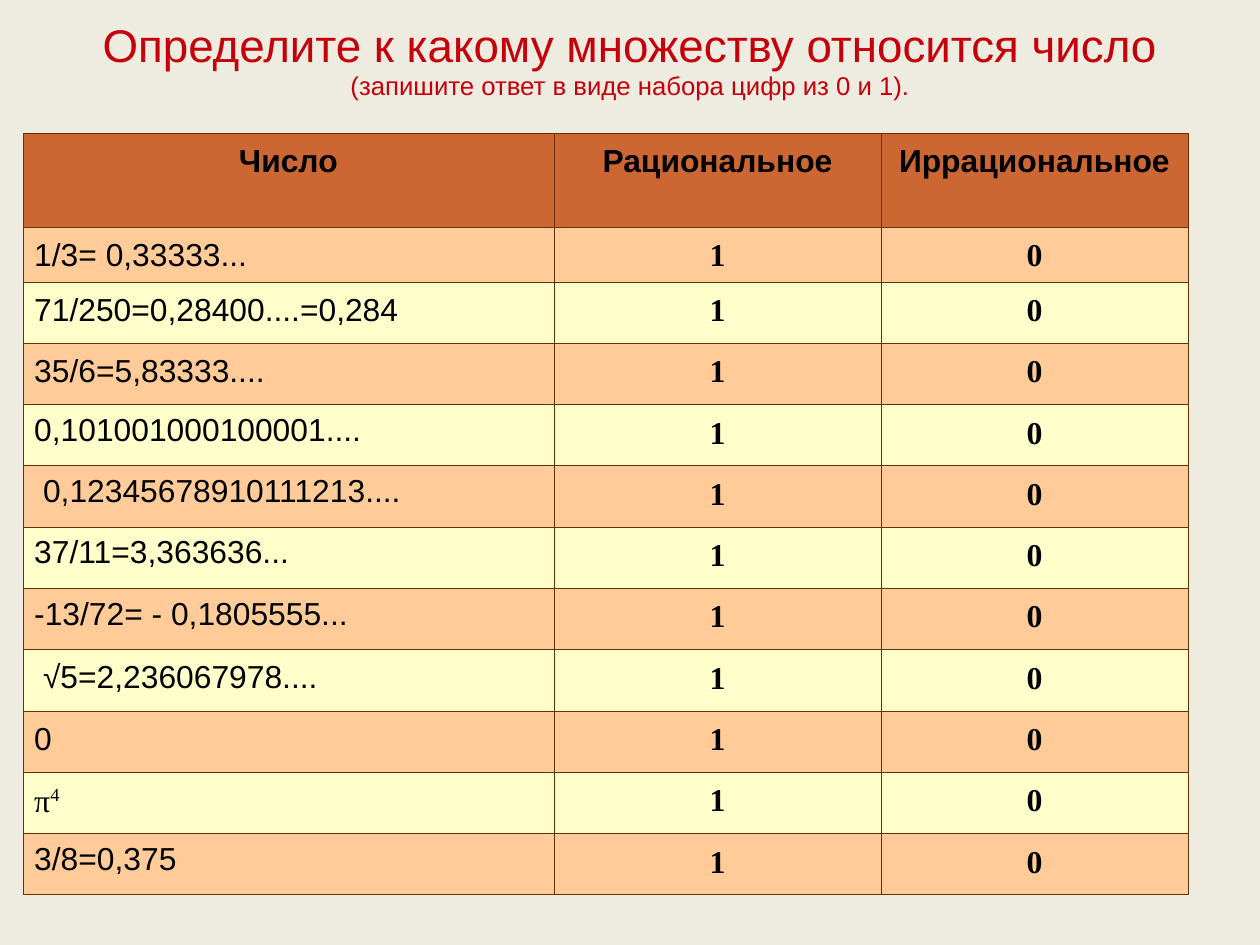
from lxml.etree import SubElement as Sub
from pptx import Presentation
from pptx.dml.color import RGBColor as Rgb
from pptx.enum.text import MSO_ANCHOR as Anchor, PP_ALIGN as Align
from pptx.oxml.ns import qn
from pptx.util import Cm, Pt

HUES = {
    "back": "EEECE1",
    "title": "C5000B",
    "ink": "000000",
    "edge": "663300",
    "head": "CC6633",
    "odd": "FFCC99",
    "even": "FFFFCC",
}
SANS, SERIF = "Arial", "Times New Roman"
HEADS = ["Число", "Рациональное", "Иррациональное"]
# Each number with its line spacing
NUMBERS = [
    ("1/3= 0,33333...", 1.14),
    ("71/250=0,28400....=0,284", 1.14),
    ("35/6=5,83333....", 1.14),
    ("0,101001000100001....", 1.07),
    (" 0,12345678910111213....", 1.07),
    ("37/11=3,363636...", 1.07),
    ("-13/72= - 0,1805555...", 1.07),
    (" √5=2,236067978....", 1.14),
    ("0", 1.14),
    ("π", 0.87),
    ("3/8=0,375", 1.07),
]
WIDTHS = [42.15, 25.97, 24.35]
HEIGHTS = [9.93, 5.62] + [6.49] * 10


class Page:
    def __init__(self, deck):
        self.wide, self.high = deck.slide_width, deck.slide_height
        self.slide = deck.slides.add_slide(deck.slide_layouts[6])
        back = self.slide.background.fill
        back.solid()
        back.fore_color.rgb = self.hue("back")

    def hue(self, name):
        return Rgb.from_string(HUES[name])

    def x(self, share):
        """Percent of the slide's width."""
        return round(self.wide * share / 100)

    def y(self, share):
        """Percent of the slide's height."""
        return round(self.high * share / 100)

    def style(self, run, size, hue="ink", face=SANS, bold=False):
        font = run.font
        font.size, font.name, font.bold = Pt(size), face, bold
        font.color.rgb = self.hue(hue)

    def title(self, lines, sizes, left, top, wide, high):
        box = self.slide.shapes.add_textbox(
            self.x(left), self.y(top), self.x(wide), self.y(high))
        frame = box.text_frame
        frame.word_wrap = True
        frame.vertical_anchor = Anchor.MIDDLE
        frame.margin_top, frame.margin_bottom = Pt(2.2), Pt(4.3)
        para = frame.paragraphs[0]
        para.text = "\v".join(lines)
        para.alignment, para.line_spacing = Align.CENTER, 0.93
        for run, size in zip(para.runs, sizes):
            self.style(run, size, "title")

    def table(self, left, top, widths, heights):
        frame = self.slide.shapes.add_table(
            len(heights), len(widths), self.x(left), self.y(top),
            self.x(sum(widths)), self.y(sum(heights)))
        grid = frame.table
        grid.first_row = grid.horz_banding = False
        for col, wide in zip(grid.columns, widths):
            col.width = self.x(wide)
        for row, high in zip(grid.rows, heights):
            row.height = self.y(high)
        return grid

    def edge(self, cell):
        """Thin border on all four sides."""
        props = cell._tc.get_or_add_tcPr()
        for side in "LRTB":
            line = Sub(props, qn(f"a:ln{side}"), w="762")
            fill = Sub(line, qn("a:solidFill"))
            Sub(fill, qn("a:srgbClr"), val=HUES["edge"])

    def cell(self, cell, text, fill, space, face=SANS, bold=True, pad=3.6,
             align=Align.CENTER):
        self.edge(cell)
        cell.fill.solid()
        cell.fill.fore_color.rgb = self.hue(fill)
        cell.margin_top = Pt(pad)
        para = cell.text_frame.paragraphs[0]
        para.text = text
        para.alignment, para.line_spacing = align, space
        self.style(para.runs[0], 20, face=face, bold=bold)
        return para

    def power(self, para, text):
        """Add a superscript after the paragraph's text."""
        run = para.add_run()
        run.text = text
        self.style(run, 20, face=SERIF)
        run._r.get_or_add_rPr().set("baseline", "33000")


def main():
    deck = Presentation()
    deck.slide_width, deck.slide_height = Cm(28), Cm(21)
    page = Page(deck)
    page.title(["Определите к какому множеству относится число",
                "(запишите ответ в виде набора цифр из 0 и 1)."],
               [28.8, 16.2], 4.99, 3.7, 90, 5.93)
    grid = page.table(1.81, 14.06, WIDTHS, HEIGHTS)
    for col, head in enumerate(HEADS):
        page.cell(grid.cell(0, col), head, "head", 1.14)
    for row, (text, space) in enumerate(NUMBERS, 1):
        fill = "odd" if row % 2 else "even"
        is_pi = text == "π"
        para = page.cell(grid.cell(row, 0), text, fill, space,
                         SERIF if is_pi else SANS, False,
                         10.1 if is_pi else 3.6, Align.LEFT)
        if is_pi:
            page.power(para, "4")
        for col, digit in enumerate("10", 1):
            page.cell(grid.cell(row, col), digit, fill, 0.93, SERIF, pad=8.6)
    deck.save("out.pptx")


if __name__ == "__main__":
    main()
